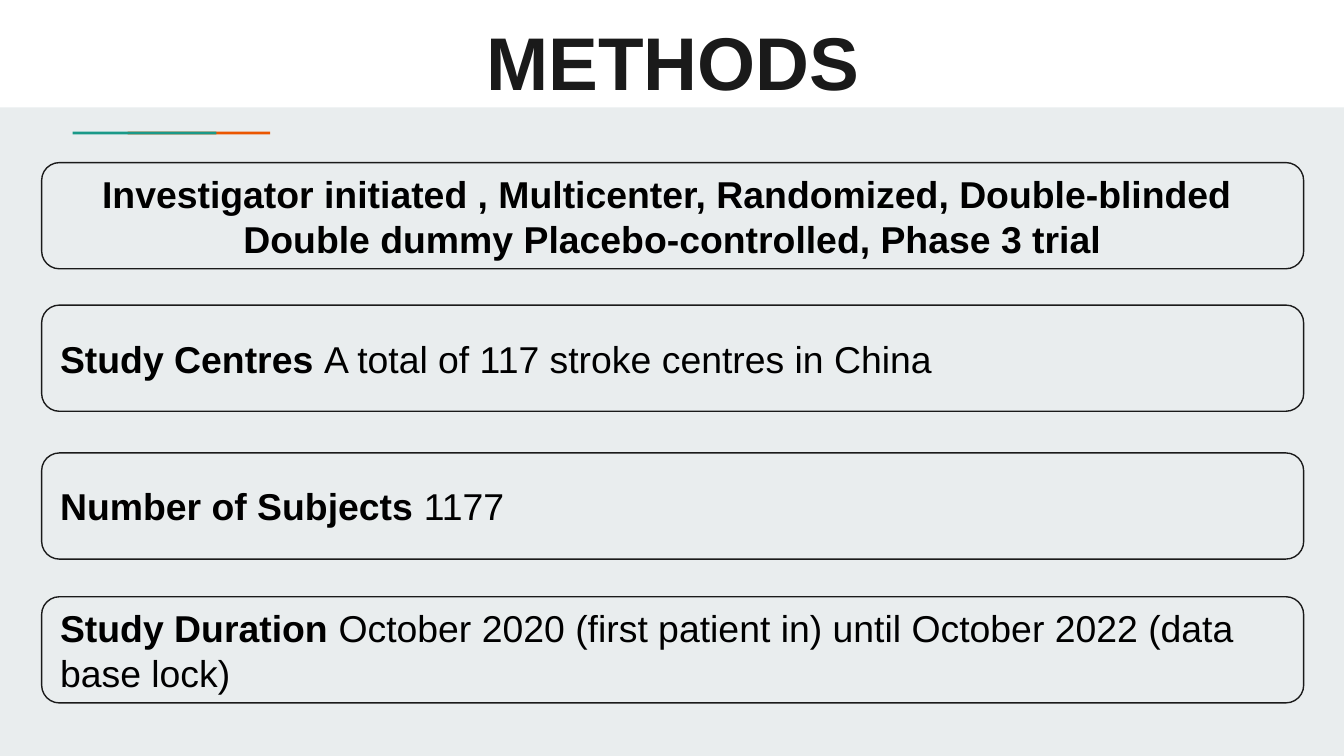
from dataclasses import dataclass

from pptx import Presentation
from pptx.dml.color import RGBColor
from pptx.enum.shapes import MSO_SHAPE
from pptx.enum.text import MSO_ANCHOR, PP_ALIGN
from pptx.slide import Slide
from pptx.text.text import TextFrame
from pptx.util import Inches, Pt

RECTANGLE = MSO_SHAPE.RECTANGLE
ROUNDED_RECTANGLE = MSO_SHAPE.ROUNDED_RECTANGLE
MIDDLE = MSO_ANCHOR.MIDDLE
LEFT = PP_ALIGN.LEFT
CENTER = PP_ALIGN.CENTER

SLIDE_WIDTH = 10
SLIDE_HEIGHT = SLIDE_WIDTH * 9 / 16
FONT = "Arial"
COLORS = {
    "background": "E9EDEE",
    "white": "FFFFFF",
    "orange": "EB5600",
    "teal": "1A9988",
    "dark": "1A1A1A",
    "black": "000000",
}


@dataclass(frozen=True)
class Bar:
    left: float
    top: float
    width: float
    height: float
    color: str


@dataclass(frozen=True)
class MethodCard:
    top: float
    heading: str
    detail: str = ""
    alignment: PP_ALIGN = LEFT


BARS = [
    Bar(0, 0, SLIDE_WIDTH, 0.8, "white"),
    Bar(0.95, 0.98, 1.06, 0.02, "orange"),
    Bar(0.54, 0.98, 1.07, 0.02, "teal"),
]

CARDS = [
    MethodCard(
        1.21,
        "Investigator initiated , Multicenter, Randomized, Double-blinded  "
        "Double dummy Placebo-controlled, Phase 3 trial",
        alignment=CENTER,
    ),
    MethodCard(2.27, "Study Centres ", "A total of 117 stroke centres in China"),
    MethodCard(3.37, "Number of Subjects ", "1177"),
    MethodCard(
        4.44,
        "Study Duration ",
        "October 2020 (first patient in) until October 2022 (data base lock)",
    ),
]


def rgb(name: str) -> RGBColor:
    return RGBColor.from_string(COLORS[name])


def draw_bar(slide: Slide, bar: Bar) -> None:
    shape = slide.shapes.add_shape(
        RECTANGLE, Inches(bar.left), Inches(bar.top), Inches(bar.width), Inches(bar.height)
    )
    shape.shadow.inherit = False
    shape.fill.solid()
    shape.fill.fore_color.rgb = rgb(bar.color)
    shape.line.fill.background()


def write_text(
    text_frame: TextFrame,
    parts: list[str],
    size: int,
    color: str,
    alignment: PP_ALIGN,
) -> None:
    text_frame.word_wrap = True
    text_frame.vertical_anchor = MIDDLE
    text_frame.margin_left = text_frame.margin_right = Inches(0.1)
    text_frame.margin_top = text_frame.margin_bottom = Inches(0.1)
    paragraph = text_frame.paragraphs[0]
    paragraph.alignment = alignment
    for index, part in enumerate(parts):
        run = paragraph.add_run()
        run.text = part
        run.font.name = FONT
        run.font.size = Pt(size)
        run.font.bold = index == 0
        run.font.color.rgb = rgb(color)


def draw_title(slide: Slide, title: str) -> None:
    shape = slide.shapes.add_textbox(Inches(0.8), Inches(0), Inches(8.41), Inches(0.9))
    write_text(shape.text_frame, [title], 40, "dark", CENTER)


def draw_card(slide: Slide, card: MethodCard) -> None:
    shape = slide.shapes.add_shape(
        ROUNDED_RECTANGLE, Inches(0.31), Inches(card.top), Inches(9.39), Inches(0.79)
    )
    shape.adjustments[0] = 0.167
    shape.shadow.inherit = False
    shape.fill.solid()
    shape.fill.fore_color.rgb = rgb("background")
    shape.line.color.rgb = rgb("dark")
    shape.line.width = Pt(0.75)
    parts = [part for part in (card.heading, card.detail) if part]
    write_text(shape.text_frame, parts, 20, "black", card.alignment)


def main() -> None:
    presentation = Presentation()
    presentation.slide_width = Inches(SLIDE_WIDTH)
    presentation.slide_height = Inches(SLIDE_HEIGHT)
    slide = presentation.slides.add_slide(presentation.slide_layouts[6])
    slide.background.fill.solid()
    slide.background.fill.fore_color.rgb = rgb("background")
    for bar in BARS:
        draw_bar(slide, bar)
    draw_title(slide, "METHODS")
    for card in CARDS:
        draw_card(slide, card)
    presentation.save("out.pptx")


if __name__ == "__main__":
    main()
